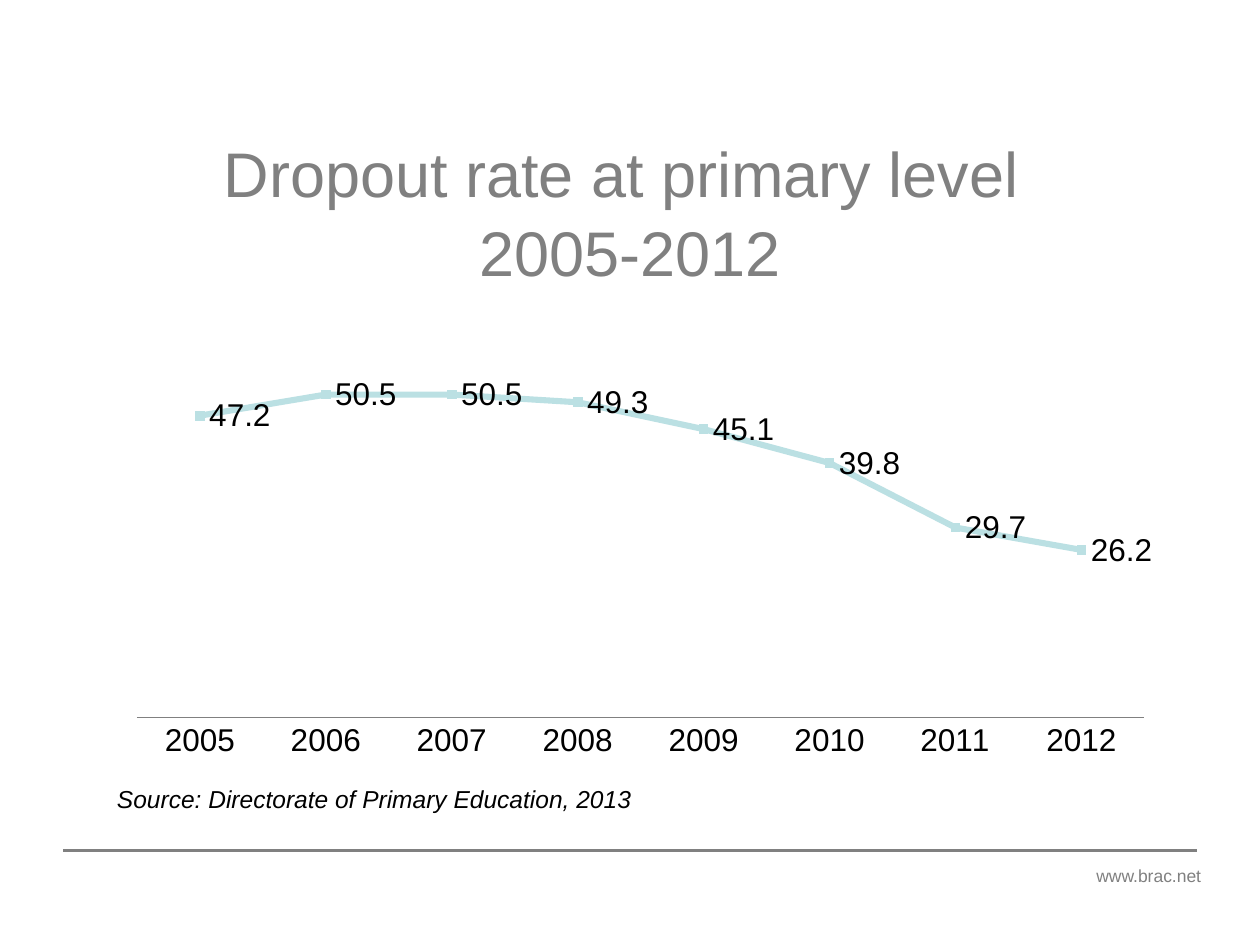
"""Build the slide on dropout rates at primary level."""
import pptx
import pptx.chart.data
import pptx.dml.color
import pptx.enum.chart
import pptx.enum.text
import pptx.oxml
import pptx.oxml.ns
import pptx.util
from lxml import etree
from pptx.util import Inches

HUES = {"grey": "808080", "black": "000000", "line": "BBE0E3"}
RATES = {"2005": 47.2, "2006": 50.5, "2007": 50.5, "2008": 49.3,
         "2009": 45.1, "2010": 39.8, "2011": 29.7, "2012": 26.2}
ALIGN = pptx.enum.text.PP_ALIGN


def hue(name):
    """Return the named colour."""
    return pptx.dml.color.RGBColor.from_string(HUES[name])


def assign(item, values):
    """Set each attribute named in a dict."""
    for key, value in values.items():
        setattr(item, key, value)


def style(font, size, tint, **more):
    """Format a font."""
    assign(font, {"name": "Arial", "size": pptx.util.Pt(size), **more})
    font.color.rgb = hue(tint)


def place(shape, box):
    """Move and size a shape, in inches."""
    sides = ("left", "top", "width", "height")
    assign(shape, dict(zip(sides, map(Inches, box))))


def add_title(slide, lines, box):
    """Fill the title placeholder, one paragraph a line."""
    place(slide.shapes.title, box)
    frame = slide.shapes.title.text_frame
    assign(frame, {"text": "\n".join(lines), "word_wrap": True,
                   "auto_size": pptx.enum.text.MSO_AUTO_SIZE.NONE,
                   "vertical_anchor": pptx.enum.text.MSO_ANCHOR.TOP,
                   "margin_top": Inches(0.1)})
    for rank, para in enumerate(frame.paragraphs):
        assign(para, {"alignment": ALIGN.CENTER,
                      "space_before": pptx.util.Pt(2 * rank)})
        style(para.runs[0].font, 36, "grey")


def add_note(slide, text, box, size, tint, align, wrap, **more):
    """Add a one-line text box."""
    frame = slide.shapes.add_textbox(*map(Inches, box)).text_frame
    assign(frame, {"text": text, "word_wrap": wrap,
                   "auto_size": pptx.enum.text.MSO_AUTO_SIZE.SHAPE_TO_FIT_TEXT})
    para = frame.paragraphs[0]
    para.alignment = align
    style(para.runs[0].font, size, tint, **more)


def add_rule(slide, left, right, top):
    """Add the line above the footer."""
    rule = slide.shapes.add_connector(
        pptx.enum.shapes.MSO_CONNECTOR.STRAIGHT,
        Inches(left), Inches(top), Inches(right), Inches(top))
    rule.line.color.rgb = hue("grey")
    rule.line.width = pptx.util.Pt(2)
    etree.SubElement(rule._element.spPr, pptx.oxml.ns.qn("a:effectLst"))


def set_plot(chart, **parts):
    """Fix the inner plot area as fractions of the chart."""
    area = chart._chartSpace.chart.plotArea
    for old in area.findall(pptx.oxml.ns.qn("c:layout")):
        area.remove(old)
    tags = {"layoutTarget": "inner", "xMode": "edge", "yMode": "edge", **parts}
    body = "".join(f'<c:{tag} val="{val}"/>' for tag, val in tags.items())
    area.insert(0, pptx.oxml.parse_xml(
        f'<c:layout {pptx.oxml.ns.nsdecls("c")}>'
        f"<c:manualLayout>{body}</c:manualLayout></c:layout>"))


def add_trend(slide, rates, box):
    """Add the line chart with its value labels."""
    data = pptx.chart.data.CategoryChartData(number_format="0.0")
    data.categories = list(rates)
    data.add_series("Series 1", list(rates.values()))
    kinds = pptx.enum.chart
    chart = slide.shapes.add_chart(
        kinds.XL_CHART_TYPE.LINE_MARKERS, *map(Inches, box), data).chart
    assign(chart, {"has_legend": False, "has_title": False})
    style(chart.font, 18, "black")
    set_plot(chart, x=0.02, y=0.02, w=0.96, h=0.87)
    assign(chart.value_axis, {"visible": False, "has_major_gridlines": False,
                              "minimum_scale": 0, "maximum_scale": 60})
    none = kinds.XL_TICK_MARK.NONE
    axis = chart.category_axis
    assign(axis, {"major_tick_mark": none, "minor_tick_mark": none})
    axis.format.line.color.rgb = hue("grey")
    axis.format.line.width = pptx.util.Pt(0.75)
    plot = chart.plots[0]
    assign(plot, {"vary_by_categories": False, "has_data_labels": True})
    assign(plot.data_labels, {"show_value": True, "number_format": "0.0",
                              "number_format_is_linked": False,
                              "position": kinds.XL_LABEL_POSITION.RIGHT})
    style(plot.data_labels.font, 18, "black")
    trend = plot.series[0]
    trend.smooth = False
    trend.format.line.color.rgb = hue("line")
    trend.format.line.width = pptx.util.Pt(3.5)
    assign(trend.marker, {"style": kinds.XL_MARKER_STYLE.SQUARE, "size": 5})
    trend.marker.format.fill.solid()
    trend.marker.format.fill.fore_color.rgb = hue("line")
    trend.marker.format.line.color.rgb = hue("line")


def main():
    """Build and save the deck."""
    deck = pptx.Presentation()
    assign(deck, {"slide_width": Inches(10), "slide_height": Inches(7.5)})
    slide = deck.slides.add_slide(deck.slide_layouts[5])
    add_rule(slide, 0.5, 9.5, 6.75)
    add_note(slide, "www.brac.net", (8.42, 6.82, 1.21, 0.27),
             10, "grey", ALIGN.RIGHT, True)
    add_title(slide, ["Dropout rate at primary level ", "2005-2012"],
              (0.5, 0.97, 9, 1.25))
    add_trend(slide, RATES, (0.92, 2.58, 8.33, 3.5))
    add_note(slide, "Source: Directorate of Primary Education, 2013",
             (0.83, 6.17, 5.49, 0.4), 14, "black", ALIGN.LEFT, False, italic=True)
    deck.save("out.pptx")


if __name__ == "__main__":
    main()
